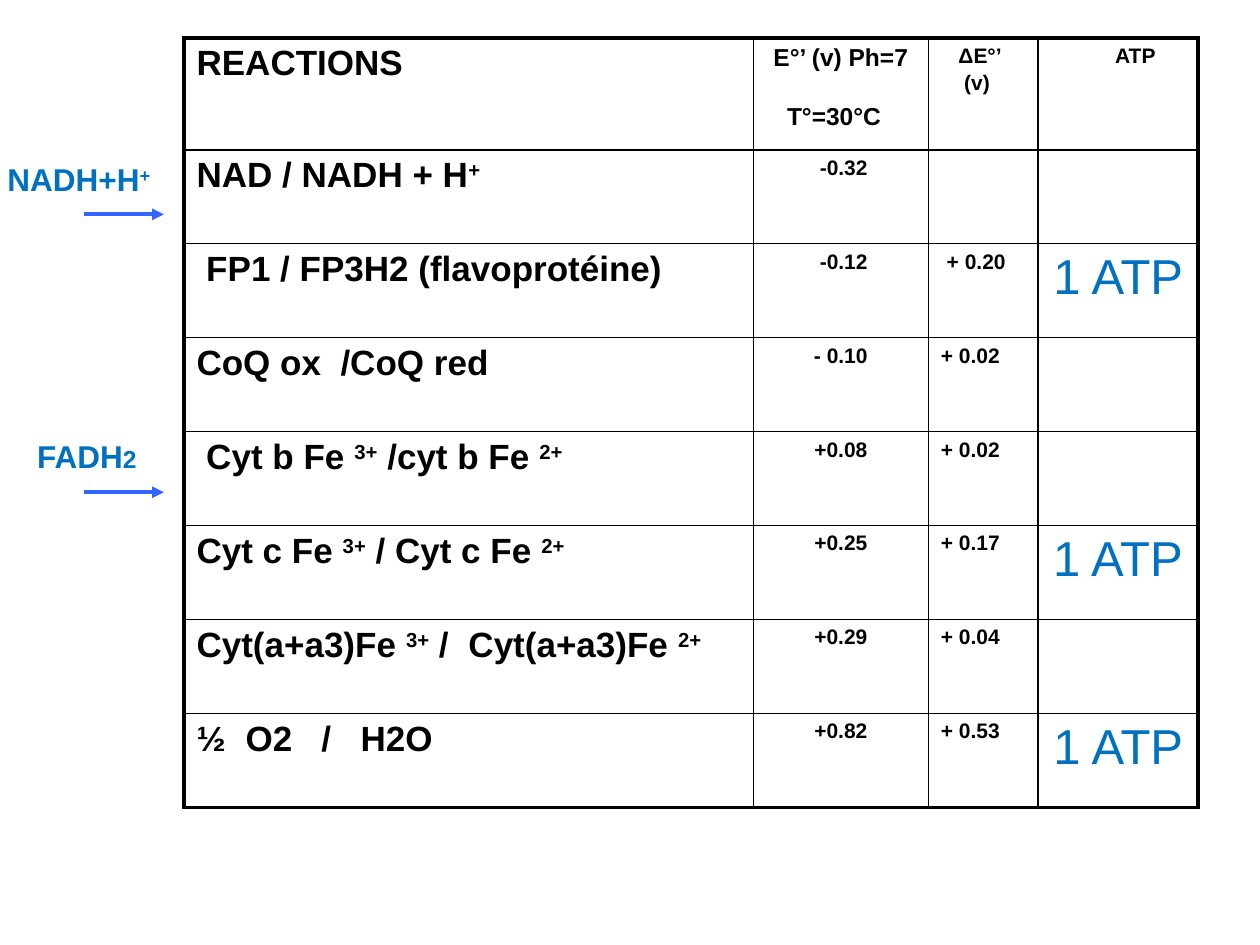
import lxml.etree
import pptx
import pptx.dml.color
import pptx.enum.shapes
import pptx.enum.text
import pptx.oxml.ns
import pptx.util

Pt = pptx.util.Pt
qn = pptx.oxml.ns.qn
ALIGN = pptx.enum.text.PP_ALIGN

BLACK, BLUE, ARROW_BLUE = "000000", "0070C0", "3366FF"
INNER, OUTER = 1, 2.25
COLUMN_WIDTHS = [325.4, 100, 62.6, 91.4]
HEADER_HEIGHT, ROW_HEIGHT = 64, 53.71

# Reaction (^ switches superscript), tab stops, potential, difference, ATP
REACTIONS = [
    ("NAD / NADH + H^+", [], " -0.32", "", ""),
    (" FP1 / FP3H2 (flavoprotéine)", [], " -0.12", " + 0.20", "1 ATP "),
    ("CoQ ox\t/CoQ red", [82.3], "- 0.10", "+ 0.02", ""),
    (" Cyt b Fe ^3+^ /cyt b Fe ^2+", [], "+0.08", "+ 0.02", ""),
    ("Cyt c Fe ^3+^ / Cyt c Fe ^2+", [], "+0.25", "+ 0.17", "1 ATP"),
    ("Cyt(a+a3)Fe ^3+^ /\tCyt(a+a3)Fe ^2+", [155.4], "+0.29", "+ 0.04", ""),
    ("½\tO2\t/\tH2O", [28, 71.4, 93.7], "+0.82", "+ 0.53", "1 ATP "),
]


def color(value):
    return pptx.dml.color.RGBColor.from_string(value)


def add_run(paragraph, text, size, fill, bold, superscript=False):
    run = paragraph.add_run()
    run.text = text
    run.font.name = "Arial"
    run.font.size = Pt(size)
    run.font.bold = bold
    run.font.color.rgb = color(fill)
    if superscript:
        run.font._element.set("baseline", "30000")


def write(paragraph, text, size=12, fill=BLACK, bold=True, align=ALIGN.LEFT,
          indent=0, before=0, tabs=(), tail="", tail_size=12):
    """Fill a paragraph; ^ switches superscript, tail is text in another size."""
    properties = paragraph._p.get_or_add_pPr()
    if tabs:
        tab_list = lxml.etree.SubElement(properties, qn("a:tabLst"))
        for position in tabs:
            lxml.etree.SubElement(tab_list, qn("a:tab"), pos=str(Pt(position)), algn="l")
    if indent:
        properties.set("marL", str(Pt(indent)))
    if before:
        paragraph.space_before = Pt(before)
    paragraph.alignment = align
    for index, part in enumerate(text.split("^")):
        if part:
            add_run(paragraph, part, size, fill, bold, superscript=index % 2 == 1)
    if tail:
        add_run(paragraph, tail, tail_size, fill, bold)


def set_borders(cell, widths):
    properties = cell._tc.get_or_add_tcPr()
    for side in "LRTB":
        line = lxml.etree.SubElement(properties, qn(f"a:ln{side}"), w=str(Pt(widths[side])))
        solid = lxml.etree.SubElement(line, qn("a:solidFill"))
        lxml.etree.SubElement(solid, qn("a:srgbClr"), val=BLACK)


def add_grid(slide):
    """Add the empty table with a heavy frame and thin inner lines."""
    row_heights = [HEADER_HEIGHT] + [ROW_HEIGHT] * len(REACTIONS)
    last_row, last_column = len(row_heights) - 1, len(COLUMN_WIDTHS) - 1
    table = slide.shapes.add_table(
        len(row_heights), len(COLUMN_WIDTHS), Pt(105.1), Pt(21.6),
        Pt(sum(COLUMN_WIDTHS)), Pt(sum(row_heights))).table
    table.first_row = table.horz_banding = False
    for column, width in zip(table.columns, COLUMN_WIDTHS):
        column.width = Pt(width)
    for r, height in enumerate(row_heights):
        table.rows[r].height = Pt(height)
        for c in range(len(COLUMN_WIDTHS)):
            cell = table.cell(r, c)
            set_borders(cell, {
                "L": OUTER if c == 0 else INNER,
                "R": OUTER if c == last_column else INNER,
                "T": OUTER if r == 0 else INNER,
                "B": OUTER if r == last_row else INNER,
            })
            cell.fill.background()
    return table


def fill_header(table):
    reaction, potential, difference, atp = [table.cell(0, c).text_frame for c in range(4)]
    write(reaction.paragraphs[0], "REACTIONS", size=20)
    write(potential.paragraphs[0], "E°’ (v) Ph=7", size=14, align=ALIGN.CENTER)
    write(potential.add_paragraph(), "T°=30°C", size=14, align=ALIGN.CENTER,
          before=5.6, tail=" ", tail_size=28)
    write(difference.paragraphs[0], "ΔE°’", indent=10)
    write(difference.add_paragraph(), "(v)", indent=13.3, before=2.4)
    write(atp.paragraphs[0], "ATP", align=ALIGN.CENTER, indent=20)


def fill_reactions(table):
    for r, (reaction, tabs, potential, difference, atp) in enumerate(REACTIONS, start=1):
        formats = [
            (reaction, dict(size=20, tabs=tabs)),
            (potential, dict(align=ALIGN.CENTER)),
            (difference, {}),
            (atp, dict(size=28, fill=BLUE, bold=False, align=ALIGN.CENTER)),
        ]
        for c, (text, text_format) in enumerate(formats):
            if text:
                write(table.cell(r, c).text_frame.paragraphs[0], text, **text_format)


def add_label(slide, left, top, width, text, **text_format):
    frame = slide.shapes.add_textbox(Pt(left), Pt(top), Pt(width), Pt(28.8)).text_frame
    frame.word_wrap = False
    frame.auto_size = pptx.enum.text.MSO_AUTO_SIZE.SHAPE_TO_FIT_TEXT
    write(frame.paragraphs[0], text, size=18, fill=BLUE, **text_format)


def add_arrow(slide, left, right, y):
    arrow = slide.shapes.add_connector(
        pptx.enum.shapes.MSO_CONNECTOR.STRAIGHT, Pt(left), Pt(y), Pt(right), Pt(y))
    arrow.line.color.rgb = color(ARROW_BLUE)
    arrow.line.width = Pt(2.25)
    lxml.etree.SubElement(arrow.line._get_or_add_ln(), qn("a:tailEnd"), type="triangle")
    lxml.etree.SubElement(arrow._element.spPr, qn("a:effectLst"))


def main():
    presentation = pptx.Presentation()
    presentation.slide_width, presentation.slide_height = Pt(720), Pt(540)
    slide = presentation.slides.add_slide(presentation.slide_layouts[6])
    table = add_grid(slide)
    fill_header(table)
    fill_reactions(table)
    add_label(slide, 14.2, 246.4, 72, "FADH", tail="2", tail_size=14)
    add_label(slide, -2.8, 88, 97.2, "NADH+H^+")
    for y in (122.5, 281.3):
        add_arrow(slide, 48, 93.6, y)
    presentation.save("out.pptx")


if __name__ == "__main__":
    main()
